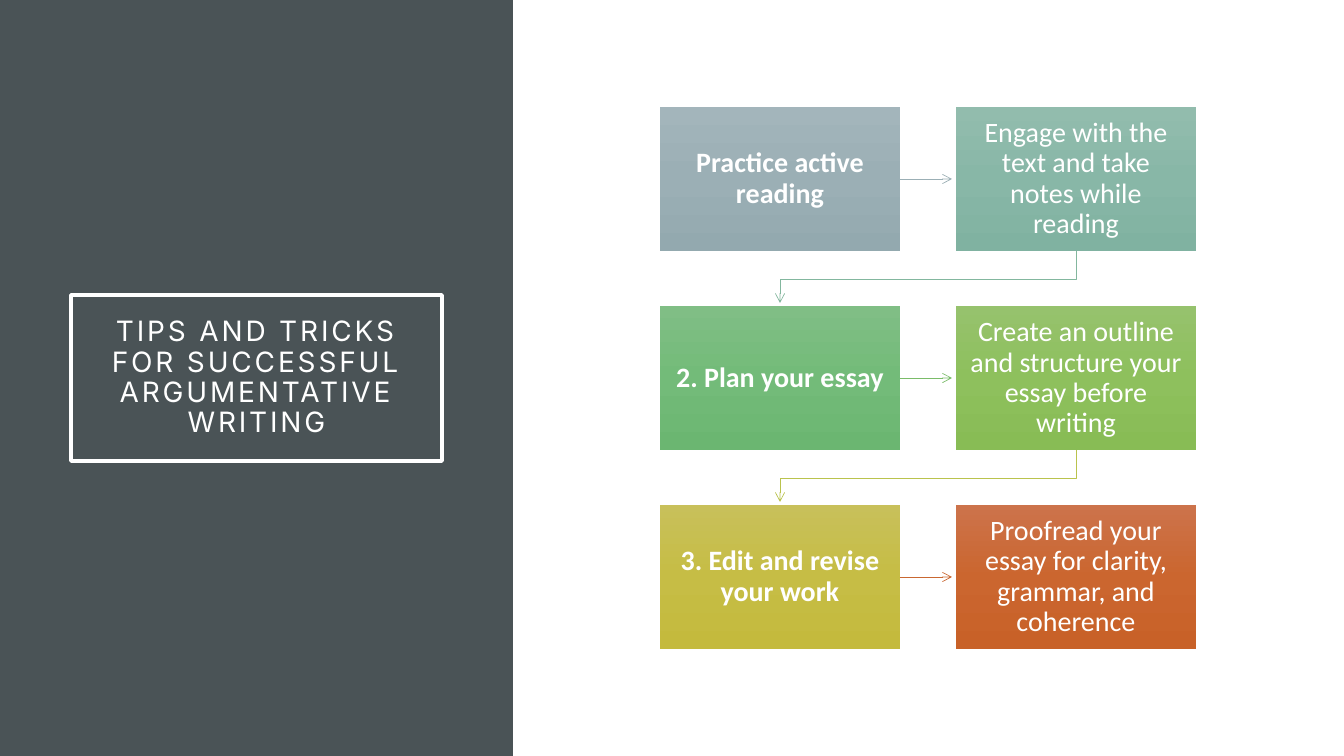
from copy import deepcopy

from lxml import etree
from pptx import Presentation
from pptx.dml.color import RGBColor
from pptx.enum.shapes import MSO_CONNECTOR, MSO_SHAPE
from pptx.enum.text import MSO_ANCHOR, PP_ALIGN
from pptx.oxml.ns import qn
from pptx.util import Emu, Pt

RECTANGLE = MSO_SHAPE.RECTANGLE
STRAIGHT = MSO_CONNECTOR.STRAIGHT
MIDDLE = MSO_ANCHOR.MIDDLE
CENTER = PP_ALIGN.CENTER

PX_PER_INCH = 100.8
COLORS = {"panel": "4A5356", "white": "FFFFFF"}

# Grid of step boxes, in px
GRID_LEFT, GRID_TOP = 660, 107
COLUMN_PITCH, ROW_PITCH = 296, 199
BOX_WIDTH, BOX_HEIGHT = 240, 144
ARROW_LENGTH, ELBOW_DROP = 52, 28

# Each step: text, gradient from top to bottom, colour of the arrow that leaves it
STEPS = [
    ("Practice active reading", ("A3B5BB", "9BAFB5", "93A9AF"), "9BAFB5"),
    ("Engage with the text and take notes while reading",
     ("92BCAD", "88B7A7", "80B2A1"), "83B79E"),
    ("2. Plan your essay", ("80BE85", "73BB79", "6BB671"), "7ABC69"),
    ("Create an outline and structure your essay before writing",
     ("96C26D", "8EC05D", "88BC55"), "BAC34D"),
    ("3. Edit and revise your work", ("C8C05A", "C6BD45", "C4BA3D"), "C96731"),
    ("Proofread your essay for clarity, grammar, and coherence",
     ("CC734B", "CB662F", "C86128"), None),
]


def px(length):
    return Emu(round(length * 914400 / PX_PER_INCH))


def rgb(color):
    return RGBColor.from_string(color)


def add_rectangle(slide, left, top, width, height, fill=None, line=None, line_width=1):
    shape = slide.shapes.add_shape(RECTANGLE, px(left), px(top), px(width), px(height))
    shape.shadow.inherit = False
    if fill:
        shape.fill.solid()
        shape.fill.fore_color.rgb = rgb(fill)
    else:
        shape.fill.background()
    if line:
        shape.line.color.rgb = rgb(line)
        shape.line.width = Pt(line_width)
    else:
        shape.line.fill.background()
    return shape


def set_gradient(shape, colors):
    """Fill with three evenly spaced stops, running downwards."""
    shape.fill.gradient()
    shape.fill.gradient_angle = 270
    stop_list = shape._element.spPr.find(".//" + qn("a:gsLst"))
    stop_list.insert(1, deepcopy(stop_list[0]))
    for index, stop in enumerate(shape.fill.gradient_stops):
        stop.position = index / 2
        stop.color.rgb = rgb(colors[index])


def set_text(shape, text, font="Calibri", size=20, bold=False, inset=12, spacing=0):
    frame = shape.text_frame
    frame.word_wrap = True
    frame.vertical_anchor = MIDDLE
    frame.margin_left = frame.margin_right = px(inset)
    frame.margin_top = frame.margin_bottom = px(inset)
    paragraph = frame.paragraphs[0]
    paragraph.alignment = CENTER
    paragraph.line_spacing = 0.9
    run = paragraph.add_run()
    run.text = text
    run.font.name = font
    run.font.size = Pt(size)
    run.font.bold = bold
    run.font.color.rgb = rgb(COLORS["white"])
    if spacing:
        run._r.get_or_add_rPr().set("spc", str(spacing * 100))


def style_arrow(arrow, color):
    arrow.line.color.rgb = rgb(color)
    arrow.line.width = Pt(0.5)
    line = arrow.line._get_or_add_ln()
    etree.SubElement(line, qn("a:tailEnd"), type="arrow")
    etree.SubElement(arrow._element.spPr, qn("a:effectLst"))


def add_straight_arrow(slide, left, top, color):
    arrow = slide.shapes.add_connector(
        STRAIGHT, px(left), px(top), px(left + ARROW_LENGTH), px(top))
    style_arrow(arrow, color)


def add_elbow_arrow(slide, left, top, color):
    """Lead from a box in the right column to the next row's left box."""
    target = left - COLUMN_PITCH
    points = [(left, top + ELBOW_DROP), (target, top + ELBOW_DROP),
              (target, top + ARROW_LENGTH)]
    builder = slide.shapes.build_freeform(px(left), px(top))
    builder.add_line_segments([(px(x), px(y)) for x, y in points], close=False)
    arrow = builder.convert_to_shape()
    arrow.fill.background()
    style_arrow(arrow, color)


def add_step(slide, index, text, gradient, arrow_color):
    row, column = divmod(index, 2)
    left = GRID_LEFT + column * COLUMN_PITCH
    top = GRID_TOP + row * ROW_PITCH
    box = add_rectangle(slide, left, top, BOX_WIDTH, BOX_HEIGHT)
    set_gradient(box, gradient)
    set_text(box, text, bold=column == 0)
    if arrow_color and column == 0:
        add_straight_arrow(slide, left + BOX_WIDTH, top + BOX_HEIGHT // 2, arrow_color)
    elif arrow_color:
        add_elbow_arrow(slide, left + BOX_WIDTH // 2, top + BOX_HEIGHT, arrow_color)


def main():
    presentation = Presentation()
    presentation.slide_width = px(1344)
    presentation.slide_height = px(756)
    slide = presentation.slides.add_slide(presentation.slide_layouts[6])

    # Dark side panel with the framed title
    add_rectangle(slide, 0, 0, 513, 756, fill=COLORS["panel"])
    title = add_rectangle(slide, 71, 295, 371, 166, line=COLORS["white"], line_width=2.5)
    set_text(title, "TIPS AND TRICKS FOR SUCCESSFUL ARGUMENTATIVE WRITING",
             font="Inter", inset=20, spacing=2)

    # Steps and the arrows between them
    for index, step in enumerate(STEPS):
        add_step(slide, index, *step)

    presentation.save("out.pptx")


if __name__ == "__main__":
    main()
